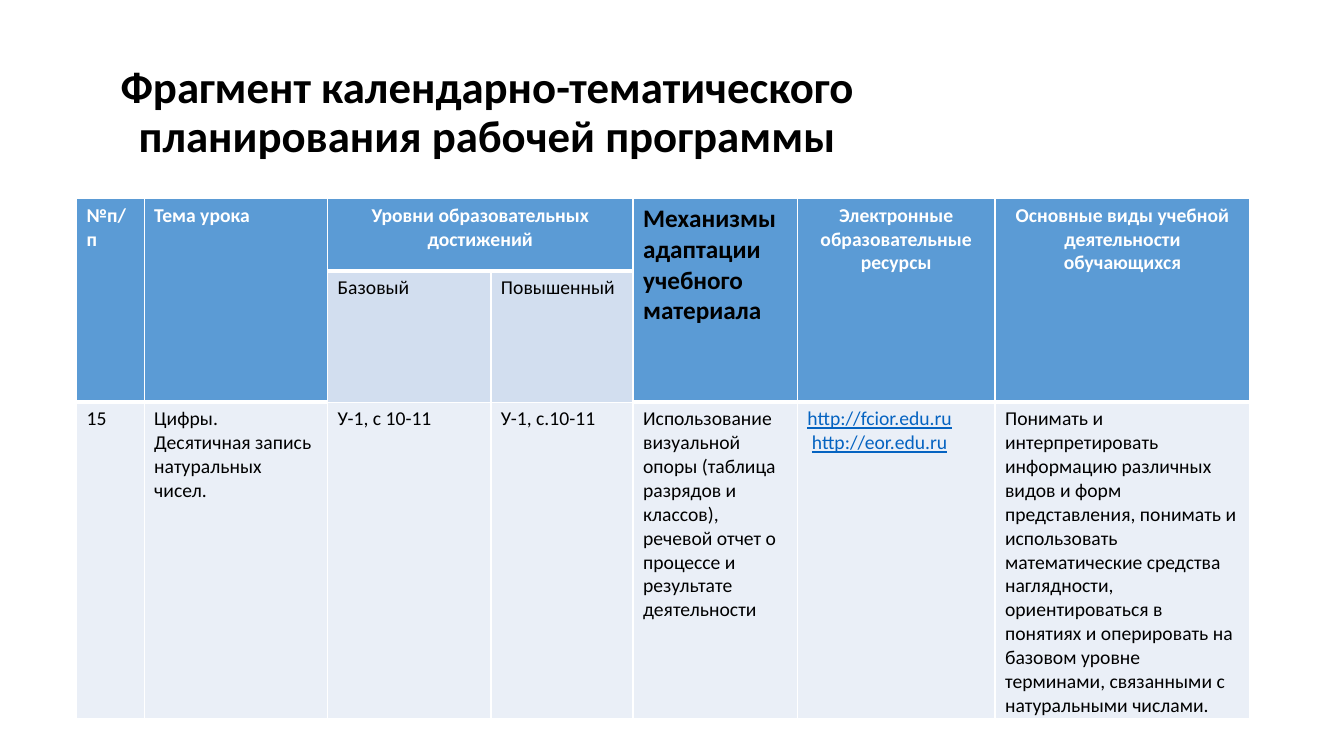
import dataclasses
import pptx
import pptx.util
import pptx.dml.color
import pptx.enum.text
import pptx.oxml
import pptx.oxml.ns

Inches = pptx.util.Inches
ALIGN = pptx.enum.text.PP_ALIGN
FONT = "Calibri"
BLACK, WHITE, LINK = "000000", "FFFFFF", "0563C1"
HEAD, BAND, BODY = "5B9BD5", "D2DEEF", "EAEFF7"
COLS = (0.67, 1.82, 1.62, 1.41, 1.63, 1.96, 2.53)
ROWS = (0.72, 0.59, 2.8)


@dataclasses.dataclass(frozen=True)
class Run:
    text: str
    color: str = BLACK
    size: int = 14
    bold: bool = False
    under: bool = False


@dataclasses.dataclass(frozen=True)
class Head:
    col: int
    run: Run
    center: bool = False
    rows: int = 2
    cols: int = 1


def title(text: str) -> Run:
    return Run(text, WHITE, bold=True)


def link(text: str) -> Run:
    return Run(text, LINK, under=True)


HEADS = (
    Head(0, title("№п/п")),
    Head(1, title("Тема урока")),
    Head(2, title("Уровни образовательных достижений"), True, 1, 2),
    Head(4, Run("Механизмы адаптации учебного материала", size=18, bold=True)),
    Head(5, title("Электронные образовательные ресурсы"), True),
    Head(6, title("Основные виды учебной деятельности обучающихся"), True),
)
LEVELS = {2: "Базовый", 3: "Повышенный"}
LESSON = (
    [[Run("15")]],
    [[Run("Цифры. Десятичная запись натуральных чисел.")]],
    [[Run("У-1, с 10-11")]],
    [[Run("У-1, с.10-11")]],
    [[Run("Использование визуальной опоры (таблица разрядов и классов), "
          "речевой отчет о процессе и результате деятельности")]],
    [[link("http://fcior.edu.ru")], [Run(" "), link("http://eor.edu.ru")]],
    [[Run("Понимать и интерпретировать информацию различных видов и форм "
          "представления, понимать и использовать математические средства "
          "наглядности, ориентироваться в понятиях и оперировать на базовом "
          "уровне терминами, связанными с натуральными числами.")]],
)


def rgb(code: str) -> pptx.dml.color.RGBColor:
    return pptx.dml.color.RGBColor.from_string(code)


def write(frame, paras: list[list[Run]], center: bool = False) -> None:
    for i, runs in enumerate(paras):
        para = frame.paragraphs[0] if i == 0 else frame.add_paragraph()
        para.alignment = ALIGN.CENTER if center else ALIGN.LEFT
        for item in runs:
            run = para.add_run()
            run.text = item.text
            font = run.font
            font.name, font.size = FONT, pptx.util.Pt(item.size)
            font.bold, font.underline = item.bold, item.under
            font.color.rgb = rgb(item.color)


def paint(cell, fill: str, base: int = 1) -> None:
    props = cell._tc.get_or_add_tcPr()
    for side, width in (("L", 1), ("R", 1), ("T", 1), ("B", base)):
        props.append(pptx.oxml.parse_xml(
            f'<a:ln{side} {pptx.oxml.ns.nsdecls("a")} w="{pptx.util.Pt(width)}">'
            f'<a:solidFill><a:srgbClr val="{WHITE}"/></a:solidFill></a:ln{side}>'))
    cell.fill.solid()
    cell.fill.fore_color.rgb = rgb(fill)


def add_title(slide) -> None:
    box = slide.shapes.add_textbox(Inches(0), Inches(0.4), Inches(9.67), Inches(1.45))
    frame = box.text_frame
    frame.word_wrap = True
    frame.vertical_anchor = pptx.enum.text.MSO_ANCHOR.MIDDLE
    text = "Фрагмент календарно-тематического планирования рабочей программы"
    write(frame, [[Run(text, size=32, bold=True)]], True)
    frame.paragraphs[0].line_spacing = 0.9


def add_plan(slide) -> None:
    shape = slide.shapes.add_table(len(ROWS), len(COLS), Inches(0.76), Inches(1.97),
                                   Inches(sum(COLS)), Inches(sum(ROWS)))
    table = shape.table
    for col, width in zip(table.columns, COLS):
        col.width = Inches(width)
    for row, height in zip(table.rows, ROWS):
        row.height = Inches(height)
    shape.height = Inches(4.68)
    for col in range(len(COLS)):
        paint(table.cell(0, col), HEAD, 3)
        if col in LEVELS:
            paint(table.cell(1, col), BAND)
            write(table.cell(1, col).text_frame, [[Run(LEVELS[col])]])
        else:
            paint(table.cell(1, col), HEAD, 3)
        paint(table.cell(2, col), BODY)
        write(table.cell(2, col).text_frame, LESSON[col])
    for head in HEADS:
        cell = table.cell(0, head.col)
        cell.merge(table.cell(head.rows - 1, head.col + head.cols - 1))
        write(cell.text_frame, [[head.run]], head.center)


def main() -> None:
    deck = pptx.Presentation()
    deck.slide_width, deck.slide_height = Inches(13.33), Inches(7.5)
    slide = deck.slides.add_slide(deck.slide_layouts[6])
    add_title(slide)
    add_plan(slide)
    deck.save("out.pptx")


if __name__ == "__main__":
    main()
